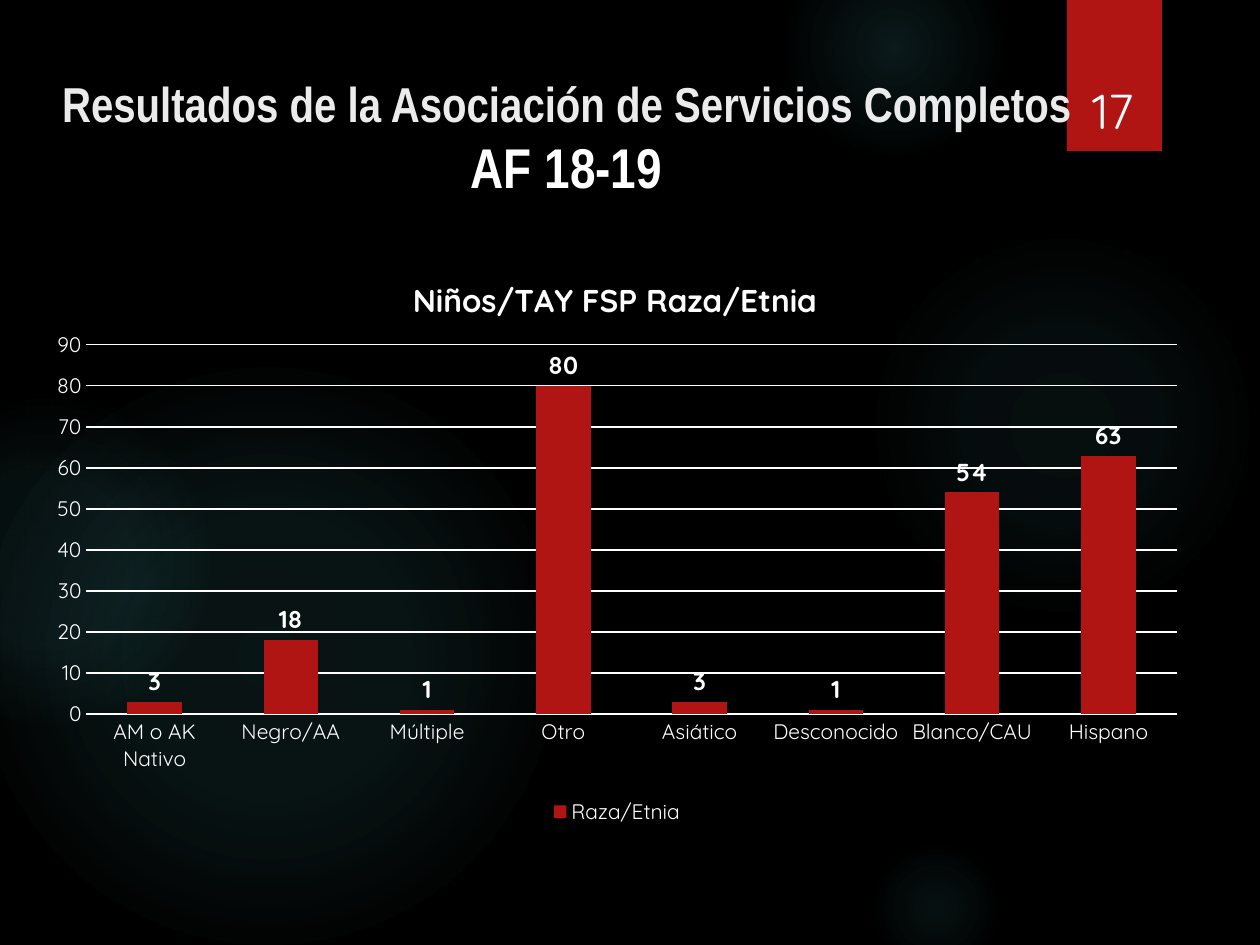
from lxml import etree
from pptx import Presentation
from pptx.chart.data import CategoryChartData
from pptx.dml.color import RGBColor
from pptx.enum.chart import XL_CHART_TYPE, XL_LABEL_POSITION, XL_LEGEND_POSITION, XL_TICK_MARK
from pptx.enum.shapes import MSO_SHAPE
from pptx.enum.text import MSO_ANCHOR, PP_ALIGN
from pptx.oxml import parse_xml
from pptx.oxml.ns import nsdecls, qn
from pptx.util import Emu, Pt

COLUMN = XL_CHART_TYPE.COLUMN_CLUSTERED
OUTSIDE_END = XL_LABEL_POSITION.OUTSIDE_END
LEGEND_BOTTOM = XL_LEGEND_POSITION.BOTTOM
NO_TICK = XL_TICK_MARK.NONE
OVAL, RECT = MSO_SHAPE.OVAL, MSO_SHAPE.RECTANGLE
MIDDLE, BOTTOM = MSO_ANCHOR.MIDDLE, MSO_ANCHOR.BOTTOM
CENTER = PP_ALIGN.CENTER

BLACK, WHITE, PALE, RED, TEAL = "000000", "FFFFFF", "EBEBEB", "B01513", "50B9C1"
TITLE_FONT, BODY_FONT = "Arial Narrow", "Quicksand"

# left, top, diameter, then (position %, opacity %) for each gradient stop
GLOWS = [
    (868, 231, 388, [(0, 7), (36, 6), (69, 0)]),
    (784, -63, 220, [(0, 14), (36, 7), (73, 0)]),
    (868, 840, 136, [(0, 9), (36, 5), (66, 0)]),
    (-21, 368, 577, [(0, 11), (36, 10), (75, 0)]),
    (-116, 399, 325, [(0, 8), (36, 8), (72, 0)]),
]
COUNTS = {
    "AM o AK Nativo": 3, "Negro/AA": 18, "Múltiple": 1, "Otro": 80,
    "Asiático": 3, "Desconocido": 1, "Blanco/CAU": 54, "Hispano": 63,
}


def px(n):
    return Emu(round(n * 914400 / 126))


def rgb(color):
    return RGBColor.from_string(color)


def style(font, size, color=WHITE, bold=False, name=BODY_FONT):
    font.size, font.bold, font.name = Pt(size), bold, name
    font.color.rgb = rgb(color)


def add_plain_shape(slide, kind, x, y, w, h):
    sp = slide.shapes.add_shape(kind, px(x), px(y), px(w), px(h))
    sp.shadow.inherit = False
    sp.line.fill.background()
    return sp


def add_glow(slide, x, y, size, stops):
    """Place a circle whose teal fades out from the centre."""
    sp = add_plain_shape(slide, OVAL, x, y, size, size)
    stop_xml = "".join(
        f'<a:gs pos="{pos * 1000}"><a:srgbClr val="{TEAL}">'
        f'<a:alpha val="{alpha * 1000}"/></a:srgbClr></a:gs>'
        for pos, alpha in stops)
    fill = parse_xml(
        f'<a:gradFill {nsdecls("a")} rotWithShape="1"><a:gsLst>{stop_xml}</a:gsLst>'
        '<a:path path="circle"><a:fillToRect l="50000" t="50000" r="50000" b="50000"/>'
        '</a:path></a:gradFill>')
    sp._element.spPr.find(qn("a:prstGeom")).addnext(fill)


def add_text_box(slide, x, y, w, h, anchor):
    """Return the single centred paragraph of a new text box."""
    tf = slide.shapes.add_textbox(px(x), px(y), px(w), px(h)).text_frame
    tf.word_wrap = True
    tf.vertical_anchor = anchor
    p = tf.paragraphs[0]
    p.alignment = CENTER
    return p


def add_title(slide, x, y, w, h):
    p = add_text_box(slide, x, y, w, h, MIDDLE)
    p.text = "Resultados de la Asociación de Servicios Completos\vAF 18-19"
    for r, size, color in zip(p.runs, (28, 32), (PALE, WHITE)):
        style(r.font, size, color, True, TITLE_FONT)


def add_page_tab(slide, x, y, w, h):
    sp = add_plain_shape(slide, RECT, x, y, w, h)
    sp.fill.solid()
    sp.fill.fore_color.rgb = rgb(RED)
    p = add_text_box(slide, x + 3, y + 40, w - 8, h - 45, BOTTOM)
    p.text = "17"
    style(p.runs[0].font, 28)


def set_layout(element, before, inner=False, **fractions):
    """Fix a chart part at fractions of the chart, ahead of the child named before."""
    for old in element.findall(qn("c:layout")):
        element.remove(old)
    layout = etree.Element(qn("c:layout"))
    manual = etree.SubElement(layout, qn("c:manualLayout"))
    if inner:
        etree.SubElement(manual, qn("c:layoutTarget"), val="inner")
    for side in "xy":
        etree.SubElement(manual, qn(f"c:{side}Mode"), val="edge")
    for side, value in fractions.items():
        etree.SubElement(manual, qn(f"c:{side}"), val=str(value))
    element.find(qn(before)).addprevious(layout)


def add_ethnicity_chart(slide, x, y, w, h):
    data = CategoryChartData()
    data.categories = list(COUNTS)
    data.add_series("Raza/Etnia", list(COUNTS.values()))
    chart = slide.shapes.add_chart(COLUMN, px(x), px(y), px(w), px(h), data).chart
    style(chart.font, 10)

    tf = chart.chart_title.text_frame
    tf.text = "Niños/TAY FSP Raza/Etnia"
    style(tf.paragraphs[0].runs[0].font, 18, bold=True)
    chart.chart_title.include_in_layout = False
    set_layout(chart.chart_title._element, "c:overlay", x=0.32, y=0.05)

    chart.has_legend = True
    chart.legend.position = LEGEND_BOTTOM
    chart.legend.include_in_layout = False
    style(chart.legend.font, 12)

    for axis in (chart.category_axis, chart.value_axis):
        axis.major_tick_mark = axis.minor_tick_mark = NO_TICK
        axis.format.line.fill.background()
        style(axis.tick_labels.font, 12)
    values = chart.value_axis
    values.minimum_scale, values.maximum_scale, values.major_unit = 0, 90, 10
    grid = values.major_gridlines.format.line
    grid.color.rgb, grid.width = rgb(WHITE), Pt(0.75)

    plot = chart.plots[0]
    plot.gap_width = 150
    plot.vary_by_categories = False
    series = plot.series[0]
    series.format.fill.solid()
    series.format.fill.fore_color.rgb = rgb(RED)
    labels = series.data_labels
    labels.show_value = True
    labels.position = OUTSIDE_END
    style(labels.font, 14, bold=True)
    plot_area = chart._chartSpace.chart.plotArea
    set_layout(plot_area, "c:barChart", inner=True, x=0.045, y=0.175, w=0.935, h=0.628)


def main():
    prs = Presentation()
    prs.slide_width, prs.slide_height = px(1260), px(945)
    slide = prs.slides.add_slide(prs.slide_layouts[6])
    slide.background.fill.solid()
    slide.background.fill.fore_color.rgb = rgb(BLACK)
    for glow in GLOWS:
        add_glow(slide, *glow)
    add_page_tab(slide, 1067, 0, 95, 151)
    add_title(slide, 31, 63, 1071, 147)
    add_ethnicity_chart(slide, 34, 242, 1166, 588)
    prs.save("out.pptx")


if __name__ == "__main__":
    main()
